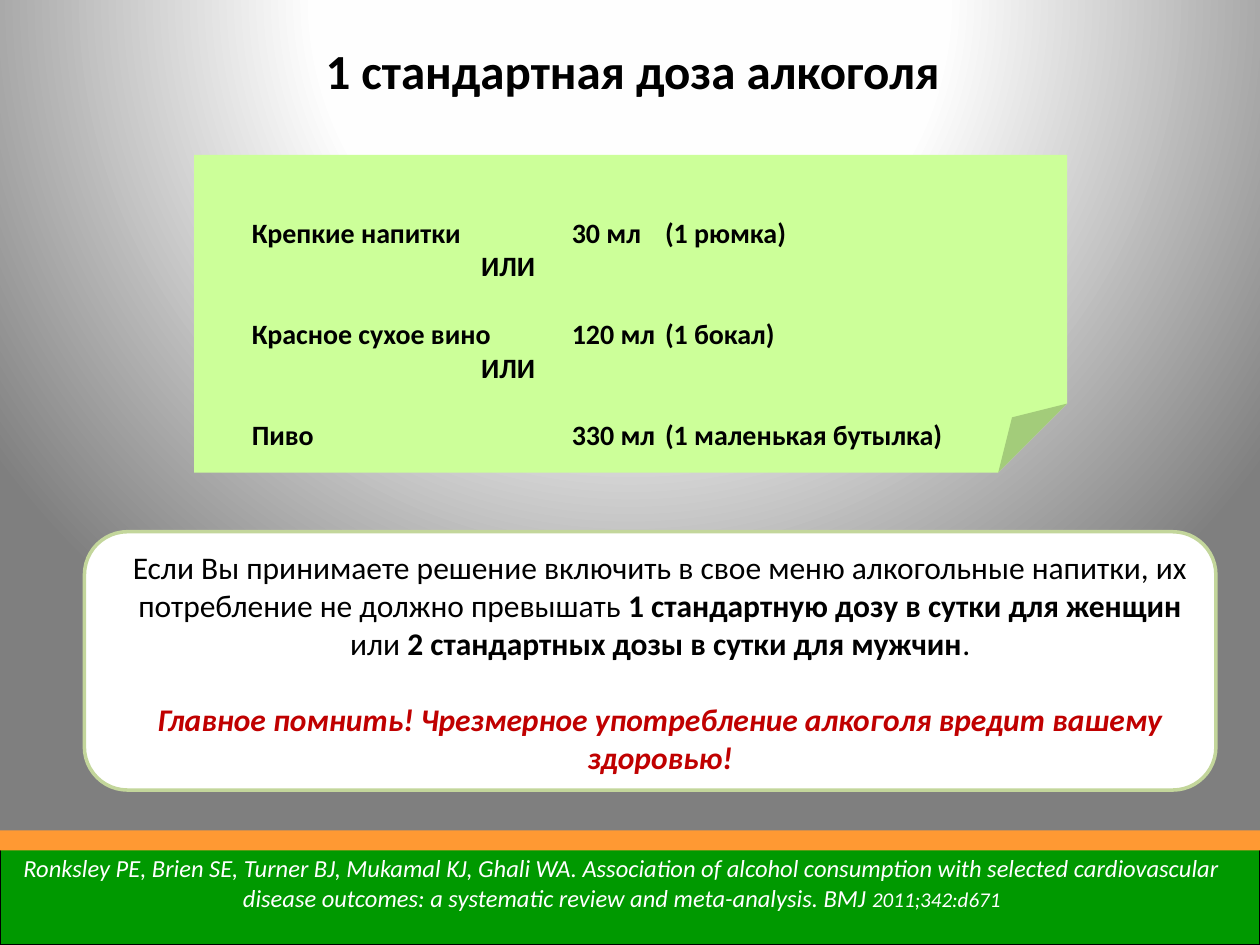
from pptx import Presentation
from pptx.dml.color import RGBColor
from pptx.enum.shapes import MSO_SHAPE
from pptx.enum.text import MSO_ANCHOR, PP_ALIGN
from pptx.oxml import parse_xml
from pptx.oxml.ns import nsdecls, qn
from pptx.util import Inches, Pt
from lxml import etree

RECT, ROUNDED, NOTE = (MSO_SHAPE.RECTANGLE, MSO_SHAPE.ROUNDED_RECTANGLE,
                       MSO_SHAPE.FOLDED_CORNER)
LEFT, CENTER = PP_ALIGN.LEFT, PP_ALIGN.CENTER
TOP, MIDDLE = MSO_ANCHOR.TOP, MSO_ANCHOR.MIDDLE

BLACK = RGBColor(0x00, 0x00, 0x00)
WHITE = RGBColor(0xFF, 0xFF, 0xFF)
RED = RGBColor(0xC0, 0x00, 0x00)
PALE_GREEN = RGBColor(0xC3, 0xD6, 0x9B)
LIME = RGBColor(0xCC, 0xFF, 0x99)
GREEN = RGBColor(0x00, 0x99, 0x00)
ORANGE = RGBColor(0xFF, 0x99, 0x33)

FONT = "Calibri"
DOSE_TABS = (1.82, 2.54, 3.28)  # "or", amount, serving
DOSES = [
    ("Крепкие напитки", "30 мл", "(1 рюмка)"),
    ("Красное сухое вино", "120 мл", "(1 бокал)"),
    ("Пиво", "330 мл", "(1 маленькая бутылка)"),
]


def set_background(slide):
    stops = "".join(
        f'<a:gs pos="{pos * 1000}"><a:srgbClr val="{color}"/></a:gs>'
        for pos, color in ((0, "FFFFFF"), (40, "FEFEFE"), (100, "7F7F7F")))
    bg = parse_xml(
        f'<p:bg {nsdecls("p", "a")}><p:bgPr><a:gradFill rotWithShape="1">'
        f'<a:gsLst>{stops}</a:gsLst><a:path path="circle">'
        '<a:fillToRect l="50000" t="-80000" r="50000" b="180000"/></a:path>'
        '</a:gradFill><a:effectLst/></p:bgPr></p:bg>')
    slide.element.cSld.insert(0, bg)


def add_panel(slide, kind, x, y, w, h, fill, line=None, line_width=1):
    sp = slide.shapes.add_shape(kind, Inches(x), Inches(y), Inches(w), Inches(h))
    sp.shadow.inherit = False
    sp.fill.solid()
    sp.fill.fore_color.rgb = fill
    if line is None:
        sp.line.fill.background()
    else:
        sp.line.color.rgb = line
        sp.line.width = Pt(line_width)
    return sp


def set_fold(sp, share):
    # python-pptx lists no adjustment for the folded corner
    guides = sp.element.spPr.find(qn("a:prstGeom")).find(qn("a:avLst"))
    etree.SubElement(guides, qn("a:gd"), name="adj",
                     fmla=f"val {round(share * 100000)}")


def add_text_box(slide, x, y, w, h, anchor=TOP):
    tf = slide.shapes.add_textbox(
        Inches(x), Inches(y), Inches(w), Inches(h)).text_frame
    tf.word_wrap = True
    tf.vertical_anchor = anchor
    return tf


def add_paragraph(tf, first=False, align=CENTER, before=0):
    p = tf.paragraphs[0] if first else tf.add_paragraph()
    p.alignment = align
    if before:
        p.space_before = Pt(before)
    return p


def add_run(p, text, size, color=BLACK, bold=False, italic=False):
    r = p.add_run()
    r.text = text
    r.font.name = FONT
    r.font.size = Pt(size)
    r.font.color.rgb = color
    r.font.bold = bold
    r.font.italic = italic


def add_tabs(p, positions):
    tabs = etree.SubElement(p._p.get_or_add_pPr(), qn("a:tabLst"))
    for pos in positions:
        etree.SubElement(tabs, qn("a:tab"), pos=str(Inches(pos)), algn="l")


def add_doses(slide):
    tf = add_text_box(slide, 1.9, 1.66, 6.4, 2)
    for i, (drink, amount, serving) in enumerate(DOSES):
        if i:
            p = add_paragraph(tf, align=LEFT)
            add_tabs(p, DOSE_TABS[:1])
            add_run(p, "\tИЛИ", 16, bold=True)
        p = add_paragraph(tf, first=i == 0, align=LEFT, before=19.5 if i else 0)
        add_tabs(p, DOSE_TABS[1:])
        add_run(p, f"{drink}\t{amount}\t{serving}", 16, bold=True)


def add_advice(slide):
    tf = add_text_box(slide, 0.91, 4.3, 8.66, 1.92)
    p = add_paragraph(tf, first=True)
    for text, bold in (
            ("Если Вы принимаете решение включить в свое меню алкогольные "
             "напитки, их потребление не должно превышать ", False),
            ("1 стандартную дозу в сутки для женщин ", True),
            ("или ", False),
            ("2 стандартных дозы в сутки для мужчин", True),
            (".", False)):
        add_run(p, text, 18, bold=bold)
    p = add_paragraph(tf, before=22)
    add_run(p, "Главное помнить! Чрезмерное употребление алкоголя вредит "
               "вашему здоровью!", 18, RED, bold=True, italic=True)


def add_footer(slide):
    add_panel(slide, RECT, 0, 6.74, 10, 0.76, GREEN, BLACK, 0.75)
    add_panel(slide, RECT, 0, 6.59, 10, 0.16, ORANGE)
    tf = add_text_box(slide, 0.07, 6.72, 9.73, 0.57, MIDDLE)
    p = add_paragraph(tf, first=True)
    add_run(p, "Ronksley PE, Brien SE, Turner BJ, Mukamal KJ, Ghali WA. "
               "Association of alcohol consumption with selected cardiovascular "
               "disease outcomes: a systematic review and meta-analysis. BMJ ",
            14, WHITE, italic=True)
    add_run(p, "2011;342:d671", 12, WHITE, italic=True)


def main():
    prs = Presentation()
    prs.slide_width, prs.slide_height = Inches(10), Inches(7.5)
    slide = prs.slides.add_slide(prs.slide_layouts[6])
    set_background(slide)

    # Advice card
    add_panel(slide, ROUNDED, 0.67, 4.22, 8.98, 2.05, WHITE, PALE_GREEN, 2)
    add_advice(slide)

    # Note with the standard doses
    note = add_panel(slide, NOTE, 1.54, 1.23, 6.93, 2.52, LIME)
    set_fold(note, 0.217)
    add_doses(slide)

    # Title
    tf = add_text_box(slide, 0.91, 0.27, 8.22, 0.98)
    add_run(add_paragraph(tf, first=True), "1 стандартная доза алкоголя", 28,
            bold=True)

    # Footer with the reference
    add_footer(slide)
    prs.save("out.pptx")


if __name__ == "__main__":
    main()
